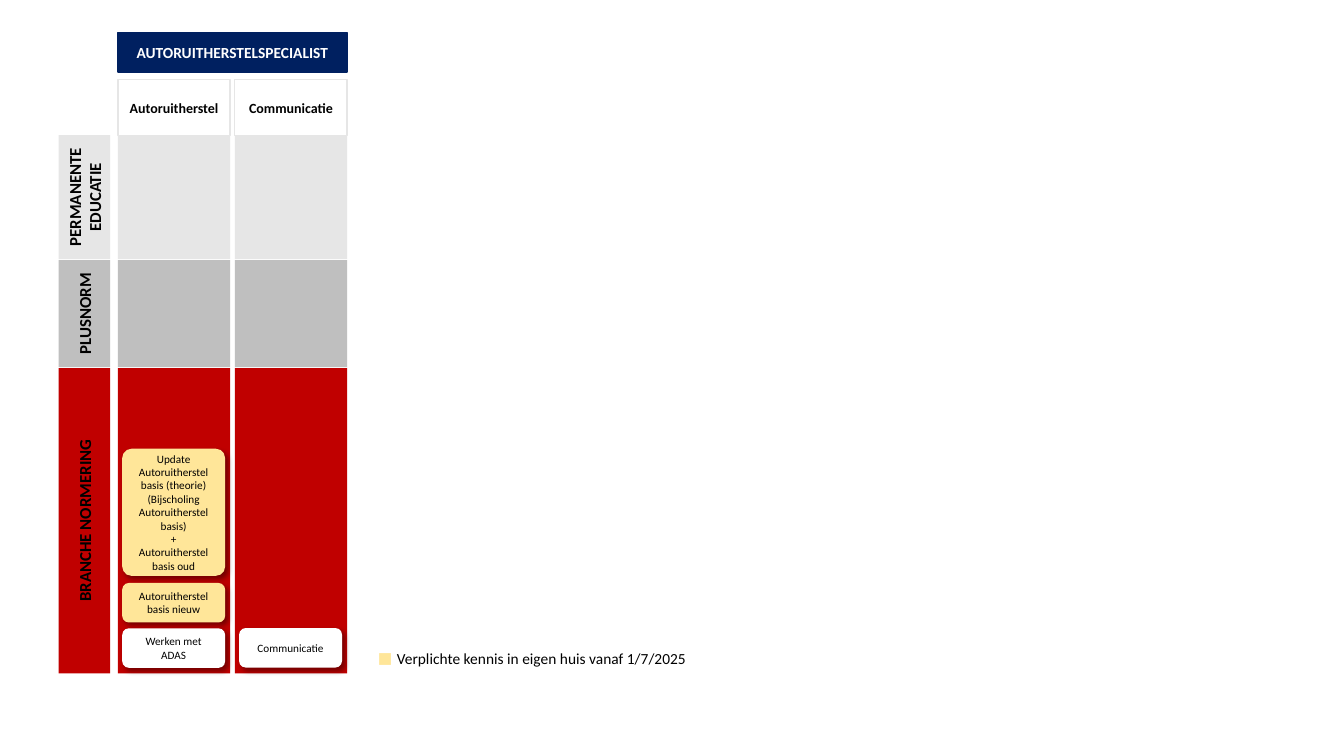
from typing import NamedTuple

from lxml.etree import SubElement
from pptx import Presentation
from pptx.dml.color import RGBColor
from pptx.enum.shapes import MSO_SHAPE
from pptx.enum.text import MSO_ANCHOR, PP_ALIGN
from pptx.oxml.ns import qn
from pptx.util import Pt

BLACK = RGBColor(0x00, 0x00, 0x00)
WHITE = RGBColor(0xFF, 0xFF, 0xFF)
NAVY = RGBColor(0x00, 0x20, 0x60)
RED = RGBColor(0xC0, 0x00, 0x00)
LIGHT_GREY = RGBColor(0xE6, 0xE6, 0xE6)
MID_GREY = RGBColor(0xBF, 0xBF, 0xBF)
YELLOW = RGBColor(0xFF, 0xE6, 0x99)

FONT = "Calibri"
LABEL_LEFT, LABEL_WIDTH = 41.9, 36.9
COLUMN_LEFT, COLUMN_PITCH, COLUMN_WIDTH = 84.2, 83.5, 80.2
CARD_INSET, CARD_WIDTH = 3.1, 73.5


class Area(NamedTuple):
    left: float
    top: float
    width: float
    height: float


class Band(NamedTuple):
    label: str
    top: float
    height: float
    fill: RGBColor


class Card(NamedTuple):
    text: str
    column: int
    top: float
    height: float
    fill: RGBColor
    rounding: float = 0.1667


COLUMNS = ["Autoruitherstel", "Communicatie"]
BANDS = [
    Band("PERMANENTE\nEDUCATIE", 96.6, 88.6, LIGHT_GREY),
    Band("PLUSNORM", 185.9, 76.3, MID_GREY),
    Band("BRANCHE NORMERING", 262.9, 218, RED),
]
CARDS = [
    Card("Update Autoruitherstel basis (theorie) (Bijscholing Autoruitherstel basis)"
         "\n+\nAutoruitherstel basis oud", 0, 320.5, 90.8, YELLOW, 0.09),
    Card("Autoruitherstel basis nieuw", 0, 416.4, 28.2, YELLOW),
    Card("Werken met ADAS", 0, 448.8, 28.2, WHITE),
    Card("Communicatie", 1, 448.6, 28.2, WHITE),
]


def column_left(index: int) -> float:
    return COLUMN_LEFT + index * COLUMN_PITCH


def add_block(page, area: Area, fill: RGBColor, line: RGBColor | None = None,
              kind=MSO_SHAPE.RECTANGLE):
    block = page.shapes.add_shape(kind, *(Pt(value) for value in area))
    block.shadow.inherit = False
    block.fill.solid()
    block.fill.fore_color.rgb = fill
    if line is None:
        block.line.fill.background()
    else:
        block.line.color.rgb = line
        block.line.width = Pt(1)
    return block


def write_centred(block, text: str, size: float, color: RGBColor = BLACK,
                  bold: bool = True) -> None:
    frame = block.text_frame
    frame.word_wrap = True
    frame.vertical_anchor = MSO_ANCHOR.MIDDLE
    frame.text = text
    for para in frame.paragraphs:
        para.alignment = PP_ALIGN.CENTER
        format_spans(para, size, color, bold)


def format_spans(para, size: float, color: RGBColor, bold: bool = False) -> None:
    for span in para.runs:
        span.font.name = FONT
        span.font.size = Pt(size)
        span.font.bold = bold
        span.font.color.rgb = color


def add_drop_shadow(block) -> None:
    effects = block._element.spPr.find(qn("a:effectLst"))
    shadow = SubElement(effects, qn("a:outerShdw"), blurRad=str(Pt(4)),
                        dist=str(Pt(3)), dir="2700000", algn="tl", rotWithShape="0")
    color = SubElement(shadow, qn("a:srgbClr"), val=str(BLACK))
    SubElement(color, qn("a:alpha"), val="40000")


def add_band(page, band: Band) -> None:
    """Draw the turned row label and one cell per column."""
    for index in range(len(COLUMNS)):
        add_block(page, Area(column_left(index), band.top, COLUMN_WIDTH, band.height),
                  band.fill)
    label = add_block(page, Area(LABEL_LEFT, band.top, LABEL_WIDTH, band.height), band.fill)
    write_centred(label, band.label, 12)
    label.text_frame._txBody.bodyPr.set("vert", "vert270")


def add_card(page, card: Card) -> None:
    area = Area(column_left(card.column) + CARD_INSET, card.top, CARD_WIDTH, card.height)
    block = add_block(page, area, card.fill, kind=MSO_SHAPE.ROUNDED_RECTANGLE)
    block.adjustments[0] = card.rounding
    add_drop_shadow(block)
    write_centred(block, card.text, 8, bold=False)


def add_headers(page) -> None:
    full_width = COLUMN_PITCH * (len(COLUMNS) - 1) + COLUMN_WIDTH
    title = add_block(page, Area(COLUMN_LEFT, 23.3, full_width, 28.2), NAVY, NAVY)
    write_centred(title, "AUTORUITHERSTELSPECIALIST", 11, WHITE)
    for index, name in enumerate(COLUMNS):
        header = add_block(page, Area(column_left(index), 56.9, COLUMN_WIDTH, 39.7),
                           WHITE, LIGHT_GREY)
        header.text_frame.margin_left = header.text_frame.margin_right = Pt(3.6)
        write_centred(header, name, 10)


def add_legend(page) -> None:
    box = page.shapes.add_textbox(Pt(262.9), Pt(460.1), Pt(237.6), Pt(20.6))
    box.text_frame.word_wrap = False
    para = box.text_frame.paragraphs[0]
    para.text = "Verplichte kennis in eigen huis vanaf 1/7/2025"
    properties = para._p.get_or_add_pPr()
    properties.set("marL", str(Pt(13.5)))
    properties.set("indent", str(Pt(-13.5)))
    bullet_color = SubElement(properties, qn("a:buClr"))
    SubElement(bullet_color, qn("a:srgbClr"), val=str(YELLOW))
    SubElement(properties, qn("a:buFont"), typeface=FONT)
    SubElement(properties, qn("a:buChar"), char="■")
    format_spans(para, 11, BLACK)


def main() -> None:
    deck = Presentation()
    deck.slide_width, deck.slide_height = Pt(960), Pt(540)
    page = deck.slides.add_slide(deck.slide_layouts[6])
    for band in BANDS:
        add_band(page, band)
    add_headers(page)
    for card in CARDS:
        add_card(page, card)
    add_legend(page)
    deck.save("out.pptx")


if __name__ == "__main__":
    main()
